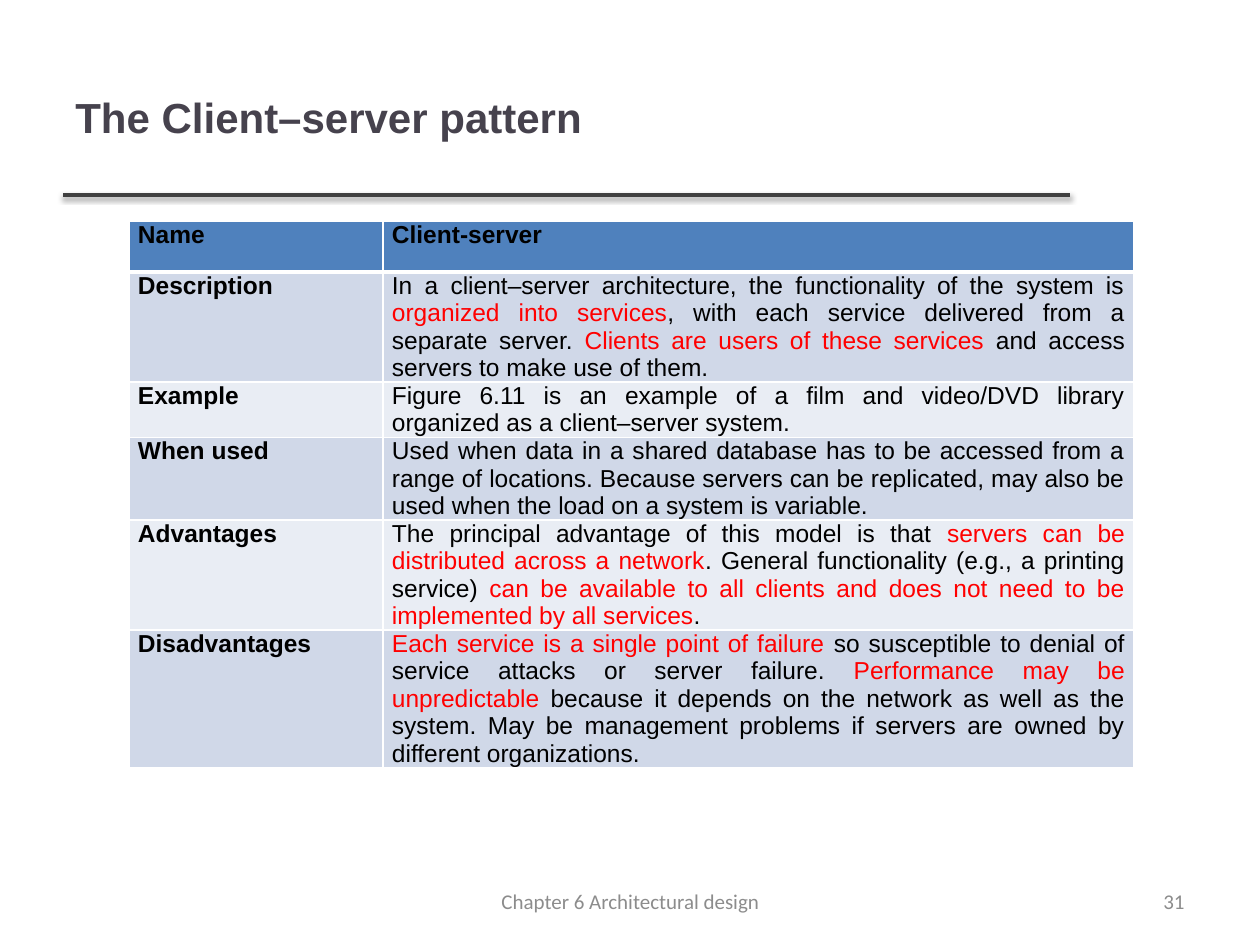
from dataclasses import dataclass

from pptx import Presentation
from pptx.dml.color import RGBColor
from pptx.enum.shapes import MSO_CONNECTOR
from pptx.enum.text import MSO_ANCHOR, PP_ALIGN
from pptx.oxml import parse_xml
from pptx.oxml.ns import nsdecls
from pptx.util import Emu, Pt

STRAIGHT = MSO_CONNECTOR.STRAIGHT
MIDDLE = MSO_ANCHOR.MIDDLE
LEFT, CENTER, RIGHT, JUSTIFY = (
    PP_ALIGN.LEFT, PP_ALIGN.CENTER, PP_ALIGN.RIGHT, PP_ALIGN.JUSTIFY)

PX_PER_INCH = 126
BLACK, RED, WHITE = "000000", "FF0000", "FFFFFF"
HEADER_BLUE, BAND_DARK, BAND_LIGHT = "4F81BD", "D0D8E8", "E9EDF4"


@dataclass
class Label:
    text: str
    left: int
    top: int
    width: int
    height: int
    align: int
    size: int
    font: str
    color: str
    bold: bool = False


@dataclass
class Row:
    name: str
    height: int
    passages: list[tuple[str, str]]


LABELS = [
    Label("The Client–server pattern", 63, 38, 1006, 157, LEFT, 24, "Arial", "46424D", True),
    Label("31", 903, 876, 294, 50, RIGHT, 12, "Calibri", "8C8C8C"),
    Label("Chapter 6 Architectural design", 431, 876, 399, 50, CENTER, 12, "Calibri", "8C8C8C"),
]

ROWS = [
    Row("Name", 51, [("Client-server", BLACK)]),
    Row("Description", 110, [
        ("In a client–server architecture, the functionality of the system is ", BLACK),
        ("organized into services", RED),
        (", with each service delivered from a separate server. ", BLACK),
        ("Clients are users of these services ", RED),
        ("and access servers to make use of them.", BLACK)]),
    Row("Example", 55, [
        ("Figure 6.11 is an example of a film and video/DVD library organized as a "
         "client–server system.", BLACK)]),
    Row("When used", 82, [
        ("Used when data in a shared database has to be accessed from a range of locations. "
         "Because servers can be replicated, may also be used when the load on a system is "
         "variable.", BLACK)]),
    Row("Advantages", 110, [
        ("The principal advantage of this model is that ", BLACK),
        ("servers can be distributed across a network", RED),
        (". General functionality (e.g., a printing service) ", BLACK),
        ("can be available to all clients and does not need to be implemented by all services",
         RED),
        (".", BLACK)]),
    Row("Disadvantages", 138, [
        ("Each service is a single point of failure ", RED),
        ("so susceptible to denial of service attacks or server failure. ", BLACK),
        ("Performance may be unpredictable ", RED),
        ("because it depends on the network as well as the system. May be management problems "
         "if servers are owned by different organizations.", BLACK)]),
]
COLUMN_WIDTHS = [254, 751]


def px(length: int) -> Emu:
    return Emu(round(length * 914400 / PX_PER_INCH))


def rgb(color: str) -> RGBColor:
    return RGBColor.from_string(color)


def set_font(font, name: str, size: int, bold: bool) -> None:
    font.name, font.size, font.bold = name, Pt(size), bold


def draw_label(slide, label: Label) -> None:
    box = slide.shapes.add_textbox(
        px(label.left), px(label.top), px(label.width), px(label.height))
    frame = box.text_frame
    frame.word_wrap = True
    frame.vertical_anchor = MIDDLE
    paragraph = frame.paragraphs[0]
    paragraph.text = label.text
    paragraph.alignment = label.align
    set_font(paragraph.font, label.font, label.size, label.bold)
    paragraph.font.color.rgb = rgb(label.color)


def draw_title_rule(slide) -> None:
    rule = slide.shapes.add_connector(STRAIGHT, px(63), px(195), px(1070), px(195))
    rule.line.color.rgb = rgb("404040")
    rule.line.width = Pt(2)
    rule._element.spPr.append(parse_xml(
        f'<a:effectLst {nsdecls("a")}>'
        f'<a:outerShdw blurRad="{Pt(3.1)}" dist="{Pt(1.6)}" dir="5400000" rotWithShape="0">'
        '<a:srgbClr val="000000"><a:alpha val="38000"/></a:srgbClr>'
        '</a:outerShdw></a:effectLst>'))


def add_borders(cell, bottom: int) -> None:
    properties = cell._tc.get_or_add_tcPr()
    for side, points in (("L", 1), ("R", 1), ("T", 1), ("B", bottom)):
        properties.append(parse_xml(
            f'<a:ln{side} {nsdecls("a")} w="{Pt(points)}"><a:solidFill>'
            f'<a:srgbClr val="{WHITE}"/></a:solidFill></a:ln{side}>'))


def fill_cell(cell, passages: list[tuple[str, str]], bold: bool, fill: str, bottom: int) -> None:
    add_borders(cell, bottom)
    cell.fill.solid()
    cell.fill.fore_color.rgb = rgb(fill)
    cell.margin_left = cell.margin_right = px(9)
    cell.margin_top = cell.margin_bottom = 0
    paragraph = cell.text_frame.paragraphs[0]
    paragraph.alignment = JUSTIFY
    set_font(paragraph.font, "Arial", 14, bold)
    for text, color in passages:
        run = paragraph.add_run()
        run.text = text
        run.font.color.rgb = rgb(color)


def draw_pattern_table(slide) -> None:
    height = sum(row.height for row in ROWS)
    table = slide.shapes.add_table(
        len(ROWS), len(COLUMN_WIDTHS), px(129), px(221),
        px(sum(COLUMN_WIDTHS)), px(height)).table
    for column, width in zip(table.columns, COLUMN_WIDTHS):
        column.width = px(width)
    for index, row in enumerate(ROWS):
        table.rows[index].height = px(row.height)
        is_header = index == 0
        band = BAND_DARK if index % 2 else BAND_LIGHT
        fill = HEADER_BLUE if is_header else band
        bottom = 3 if is_header else 1
        fill_cell(table.cell(index, 0), [(row.name, BLACK)], True, fill, bottom)
        fill_cell(table.cell(index, 1), row.passages, is_header, fill, bottom)


def main() -> None:
    presentation = Presentation()
    presentation.slide_width, presentation.slide_height = px(1260), px(945)
    slide = presentation.slides.add_slide(presentation.slide_layouts[6])

    # Rule under the title
    draw_title_rule(slide)
    # Pattern description
    draw_pattern_table(slide)
    # Title, page number and footer
    for label in LABELS:
        draw_label(slide, label)

    presentation.save("out.pptx")


if __name__ == "__main__":
    main()
